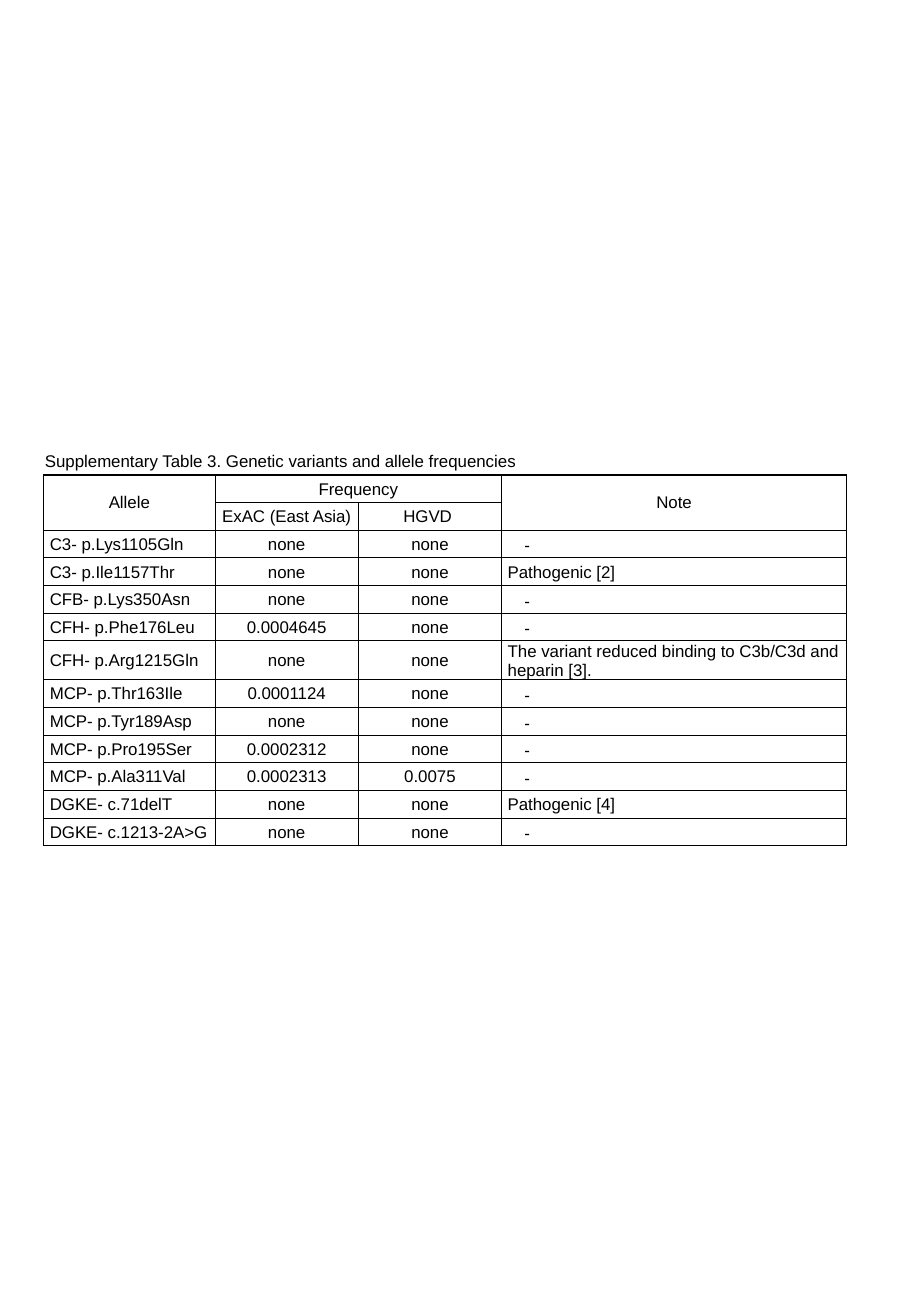
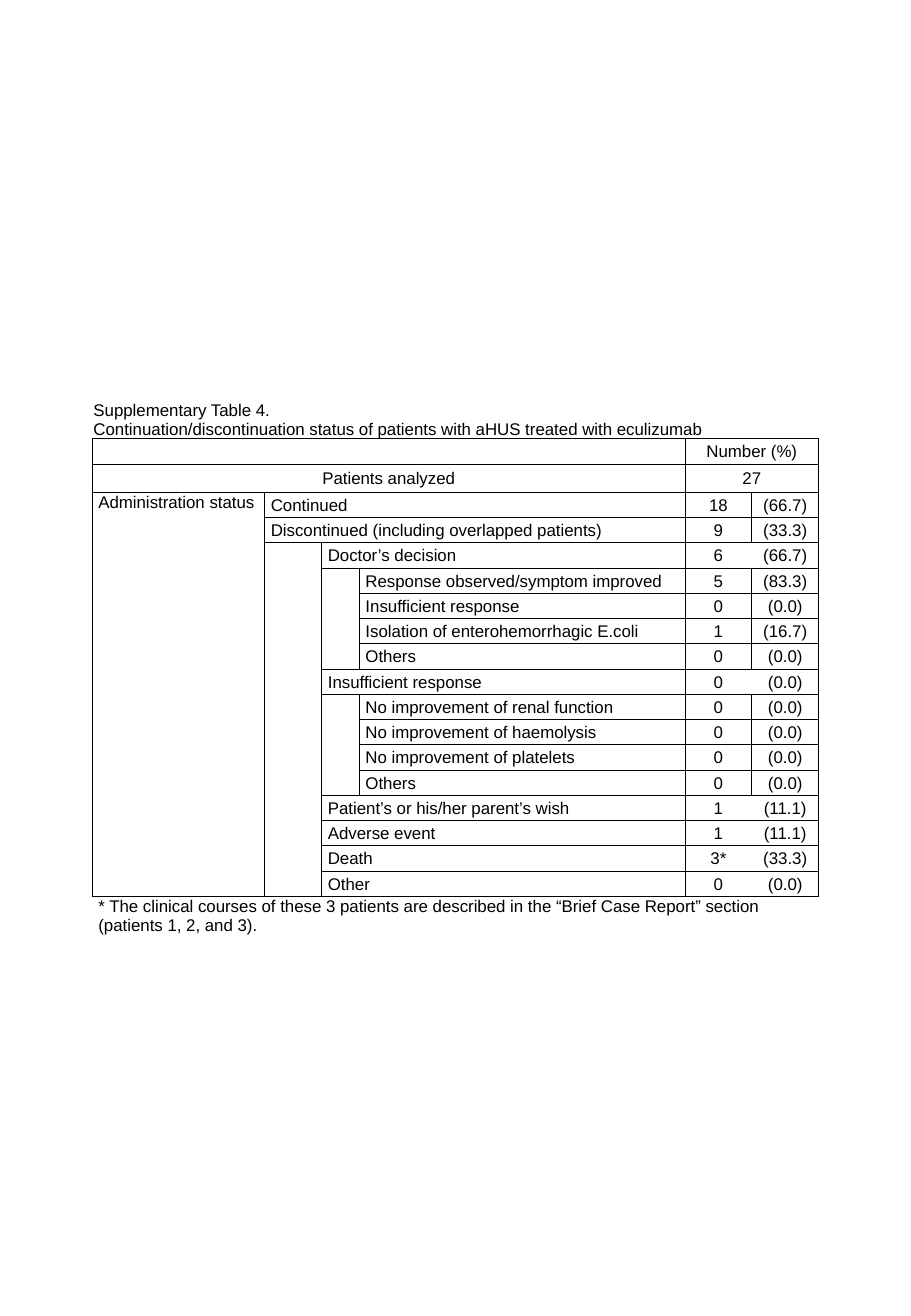
import lxml.etree
import pptx
import pptx.dml.color
import pptx.enum.text
import pptx.oxml.ns
import pptx.util

Inches = pptx.util.Inches
Pt = pptx.util.Pt
qn = pptx.oxml.ns.qn
ALIGN = pptx.enum.text.PP_ALIGN
ANCHOR = pptx.enum.text.MSO_ANCHOR

BLACK = pptx.dml.color.RGBColor(0, 0, 0)
FONT = "Arial"
TEXT_SIZE = Pt(10)
INDENT = Inches(0.04)
PLAIN_STYLE = "{2D5ABB26-0587-4C30-8999-92F81FD0307C}"
THIN, THICK = 0.5, 1
GRID = {"L": THIN, "R": THIN, "T": THIN, "B": THIN}
HEADER_GRID = {**GRID, "T": THICK}

VARIANT_TITLE = "Supplementary Table 3. Genetic variants and allele frequencies"
VARIANT_WIDTHS = [1.41, 1.18, 1.18, 2.84]
VARIANT_ROW, TALL_ROW = 2.96 / 13, 0.32
NO_NOTE = "　-"
VARIANTS = [
    ("C3- p.Lys1105Gln", "none", "none", NO_NOTE),
    ("C3- p.Ile1157Thr", "none", "none", "Pathogenic [2]"),
    ("CFB- p.Lys350Asn", "none", "none", NO_NOTE),
    ("CFH- p.Phe176Leu", "0.0004645", "none", NO_NOTE),
    ("CFH- p.Arg1215Gln", "none", "none",
     "The variant reduced binding to C3b/C3d and heparin [3]."),
    ("MCP- p.Thr163Ile", "0.0001124", "none", NO_NOTE),
    ("MCP- p.Tyr189Asp", "none", "none", NO_NOTE),
    ("MCP- p.Pro195Ser", "0.0002312", "none", NO_NOTE),
    ("MCP- p.Ala311Val", "0.0002313", "0.0075", NO_NOTE),
    ("DGKE- c.71delT", "none", "none", "Pathogenic [4]"),
    ("DGKE- c.1213-2A>G", "none", "none", NO_NOTE),
]
WRAPPED_ROW = 7

STATUS_TITLE = (
    "Supplementary Table 4.\n"
    "Continuation/discontinuation status of patients with aHUS treated with eculizumab"
)
STATUS_WIDTHS = [1.42, 0.47, 0.31, 2.68, 0.55, 0.55]
STATUSES = [
    (1, "Continued", "18", "(66.7)"),
    (1, "Discontinued (including overlapped patients)", "9", "(33.3)"),
    (2, "Doctor’s decision", "6", "(66.7)"),
    (3, "Response observed/symptom improved", "5", "(83.3)"),
    (3, "Insufficient response", "0", "(0.0)"),
    (3, "Isolation of enterohemorrhagic E.coli", "1", "(16.7)"),
    (3, "Others", "0", "(0.0)"),
    (2, "Insufficient response", "0", "(0.0)"),
    (3, "No improvement of renal function", "0", "(0.0)"),
    (3, "No improvement of haemolysis", "0", "(0.0)"),
    (3, "No improvement of platelets", "0", "(0.0)"),
    (3, "Others", "0", "(0.0)"),
    (2, "Patient’s or his/her parent’s wish", "1", "(11.1)"),
    (2, "Adverse event", "1", "(11.1)"),
    (2, "Death", "3*", "(33.3)"),
    (2, "Other", "0", "(0.0)"),
]
STATUS_HEIGHTS = [0.32, 0.21, 0.23] + [3.33 / len(STATUSES)] * len(STATUSES) + [0.33]
FOOTNOTE = (
    "* The clinical courses of these 3 patients are described in the "
    "“Brief Case Report” section (patients 1, 2, and 3)."
)


def write(cell, text, *, align=ALIGN.LEFT, anchor=ANCHOR.MIDDLE, indent=0):
    cell.vertical_anchor = anchor
    cell.text_frame.text = text
    for paragraph in cell.text_frame.paragraphs:
        paragraph.alignment = align
        if indent:
            paragraph._p.get_or_add_pPr().set("marL", str(indent))
        for run in paragraph.runs:
            run.font.name = FONT
            run.font.size = TEXT_SIZE
            run.font.color.rgb = BLACK


def draw_border(cell, side, width):
    properties = cell._tc.get_or_add_tcPr()
    line = lxml.etree.SubElement(properties, qn(f"a:ln{side}"), w=str(Pt(width)))
    fill = lxml.etree.SubElement(line, qn("a:solidFill"))
    lxml.etree.SubElement(fill, qn("a:srgbClr"), val=str(BLACK))


def add_plain_table(presentation, left, top, widths, heights):
    slide = presentation.slides.add_slide(presentation.slide_layouts[6])
    frame = slide.shapes.add_table(
        len(heights), len(widths), Inches(left), Inches(top),
        Inches(sum(widths)), Inches(sum(heights)))
    table = frame.table
    table.first_row = table.horz_banding = False
    next(frame._element.iter(qn("a:tableStyleId"))).text = PLAIN_STYLE
    for column, width in zip(table.columns, widths):
        column.width = Inches(width)
    for row, height in zip(table.rows, heights):
        row.height = Inches(height)
    for cell in table.iter_cells():
        cell.margin_left = cell.margin_right = cell.margin_top = Inches(0.01)
        cell.margin_bottom = 0
        lxml.etree.SubElement(
            cell.text_frame.paragraphs[0]._p, qn("a:endParaRPr"), sz="1000")
    return table


def place(table, row, column, text="", *, rows=1, columns=1, borders=GRID, **text_format):
    origin = table.cell(row, column)
    last_row, last_column = row + rows - 1, column + columns - 1
    if rows * columns > 1:
        origin.merge(table.cell(last_row, last_column))
    for r in range(row, last_row + 1):
        for c in range(column, last_column + 1):
            cell = table.cell(r, c)
            outer = {"L": c == column, "R": c == last_column,
                     "T": r == row, "B": r == last_row}
            for side in "LRTB":
                if side in borders and (outer[side] or (r, c) == (row, column)):
                    draw_border(cell, side, borders[side])
            cell.fill.background()
    if text:
        write(origin, text, **text_format)


def add_variant_slide(presentation):
    heights = [VARIANT_ROW] * (len(VARIANTS) + 3)
    heights[WRAPPED_ROW] = TALL_ROW
    table = add_plain_table(presentation, 0.36, 3.68, VARIANT_WIDTHS, heights)
    center = {"align": ALIGN.CENTER}
    place(table, 0, 0, VARIANT_TITLE, columns=4, borders={"B": THICK})
    place(table, 1, 0, "Allele", rows=2, borders=HEADER_GRID, **center)
    place(table, 1, 1, "Frequency", columns=2, borders=HEADER_GRID, **center)
    place(table, 1, 3, "Note", rows=2, borders=HEADER_GRID, **center)
    place(table, 2, 1, "ExAC (East Asia)", **center)
    place(table, 2, 2, "HGVD ", **center)
    for row, values in enumerate(VARIANTS, 3):
        for column, value in enumerate(values):
            text_format = center if column in (1, 2) else {"indent": INDENT}
            place(table, row, column, value, **text_format)


def add_status_slide(presentation):
    table = add_plain_table(presentation, 0.76, 3.29, STATUS_WIDTHS, STATUS_HEIGHTS)
    center = {"align": ALIGN.CENTER}
    top_left = {"anchor": ANCHOR.TOP, "indent": INDENT}
    place(table, 0, 0, STATUS_TITLE, columns=6, borders={"B": THIN})
    for row, (label, number) in enumerate([("", "Number (%)"), ("Patients analyzed", "27")], 1):
        place(table, row, 0, label, columns=4, **center)
        place(table, row, 4, number, columns=2, **center)
    place(table, 3, 0, "Administration status", rows=len(STATUSES), **top_left)
    for index, (level, label, number, percent) in enumerate(STATUSES):
        row = index + 3
        place(table, row, level, label, columns=4 - level, indent=INDENT)
        place(table, row, 4, number, borders={s: THIN for s in "LTB"}, **center)
        place(table, row, 5, percent, borders={s: THIN for s in "RTB"}, **center)
        children = 0
        for deeper, *_ in STATUSES[index + 1:]:
            if deeper <= level:
                break
            children += 1
        if children:
            place(table, row + 1, level, rows=children)
    place(table, len(STATUSES) + 3, 0, FOOTNOTE, columns=6, borders={"T": THIN}, **top_left)


def main():
    presentation = pptx.Presentation()
    presentation.slide_width = Inches(7.5)
    presentation.slide_height = Inches(10.83)
    add_variant_slide(presentation)
    add_status_slide(presentation)
    presentation.save("out.pptx")


if __name__ == "__main__":
    main()
